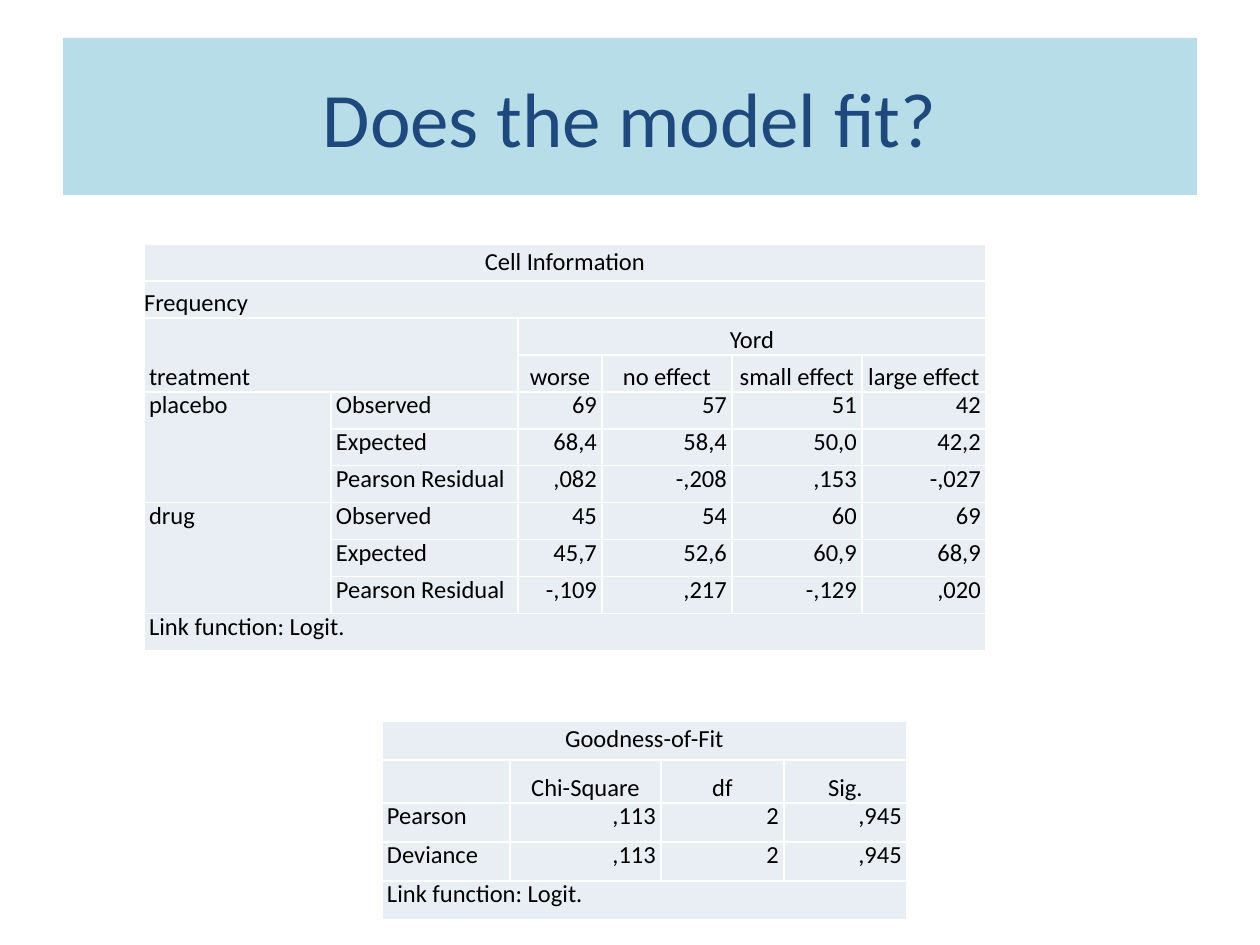
from lxml.etree import SubElement
from pptx import Presentation
from pptx.dml.color import RGBColor
from pptx.enum.text import MSO_ANCHOR, PP_ALIGN
from pptx.oxml.ns import qn
from pptx.util import Pt

PX = 914400 // 126  # EMU in one px
FONT = "Calibri"
BLACK = RGBColor(0x00, 0x00, 0x00)
WHITE = RGBColor(0xFF, 0xFF, 0xFF)
NAVY = RGBColor(0x1F, 0x49, 0x7D)
AQUA = RGBColor(0xB7, 0xDE, 0xE8)
PALE = RGBColor(0xE9, 0xED, 0xF4)

TITLE = "Does the model fit?"

# None is a cell covered by a merge; spans are (row, col, last row, last col)
CELL_INFO = {
    "at": (144, 244),
    "cols": (187, 187, 84, 130, 130, 124),
    "rows": (37,) * 11,
    "head_rows": 4,
    "label_cols": 2,
    "flush": "Frequency",
    "spans": [(0, 0, 0, 5), (1, 0, 1, 5), (2, 0, 3, 1), (2, 2, 2, 5),
              (4, 0, 6, 0), (7, 0, 9, 0), (10, 0, 10, 5)],
    "cells": [
        ("Cell Information", None, None, None, None, None),
        ("Frequency", None, None, None, None, None),
        ("treatment", None, "Yord", None, None, None),
        (None, None, "worse", "no effect", "small effect", "large effect"),
        ("placebo", "Observed", "69", "57", "51", "42"),
        (None, "Expected", "68,4", "58,4", "50,0", "42,2"),
        (None, "Pearson Residual", ",082", "-,208", ",153", "-,027"),
        ("drug", "Observed", "45", "54", "60", "69"),
        (None, "Expected", "45,7", "52,6", "60,9", "68,9"),
        (None, "Pearson Residual", "-,109", ",217", "-,129", ",020"),
        ("Link function: Logit.", None, None, None, None, None),
    ],
}
FIT = {
    "at": (382, 721),
    "cols": (128, 151, 123, 123),
    "rows": (39, 43, 39, 39, 39),
    "head_rows": 2,
    "label_cols": 1,
    "flush": None,
    "spans": [(0, 0, 0, 3), (4, 0, 4, 3)],
    "cells": [
        ("Goodness-of-Fit", None, None, None),
        (None, "Chi-Square", "df", "Sig."),
        ("Pearson", ",113", "2", ",945"),
        ("Deviance", ",113", "2", ",945"),
        ("Link function: Logit.", None, None, None),
    ],
}


def add_run(p, text, size, color):
    r = p.add_run()
    r.text = text
    r.font.name, r.font.size = FONT, Pt(size)
    r.font.color.rgb = color


def style_cell(cell):
    """White 1 pt borders, pale fill, no margins."""
    tcPr = cell._tc.get_or_add_tcPr()
    for side in ("lnL", "lnR", "lnT", "lnB"):
        ln = SubElement(tcPr, qn(f"a:{side}"), w=str(Pt(1)))
        fill = SubElement(ln, qn("a:solidFill"))
        SubElement(fill, qn("a:srgbClr"), val=str(WHITE))
    cell.fill.solid()
    cell.fill.fore_color.rgb = PALE
    cell.margin_left = cell.margin_right = 0
    cell.margin_top = cell.margin_bottom = 0


def add_stat_table(s, data):
    cols, rows = data["cols"], data["rows"]
    box = (*data["at"], sum(cols), sum(rows))
    table = s.shapes.add_table(len(rows), len(cols), *(v * PX for v in box)).table
    table.first_row = table.horz_banding = False
    for col, width in zip(table.columns, cols):
        col.width = width * PX
    for row, height in zip(table.rows, rows):
        row.height = height * PX

    for i, texts in enumerate(data["cells"]):
        in_head = i < data["head_rows"]
        for j, text in enumerate(texts):
            cell = table.cell(i, j)
            style_cell(cell)
            # Title in the middle, headings at the bottom, body at the top
            if i == 0:
                cell.vertical_anchor = MSO_ANCHOR.MIDDLE
            else:
                cell.vertical_anchor = MSO_ANCHOR.BOTTOM if in_head else MSO_ANCHOR.TOP
            if text is None:
                continue
            p = cell.text_frame.paragraphs[0]
            p.line_spacing = Pt(16)
            # Labels left, headings centred, numbers right
            if i > 0 and j < data["label_cols"]:
                p.alignment = PP_ALIGN.LEFT
            else:
                p.alignment = PP_ALIGN.CENTER if in_head else PP_ALIGN.RIGHT
            if text != data["flush"]:
                pPr = p._p.get_or_add_pPr()
                for side in ("marL", "marR"):
                    pPr.set(side, str(5 * PX))
            add_run(p, text, 14, BLACK)

    for top, left, bottom, right in data["spans"]:
        table.cell(top, left).merge(table.cell(bottom, right))


prs = Presentation()
prs.slide_width, prs.slide_height = 1260 * PX, 945 * PX
s = prs.slides.add_slide(prs.slide_layouts[5])

# Title band
title = s.shapes.title
title.left, title.top, title.width, title.height = (v * PX for v in (63, 38, 1134, 157))
title.fill.solid()
title.fill.fore_color.rgb = AQUA
tf = title.text_frame
tf.vertical_anchor = MSO_ANCHOR.MIDDLE
p = tf.paragraphs[0]
p.alignment = PP_ALIGN.CENTER
add_run(p, TITLE, 44, NAVY)

# Tables
for data in (CELL_INFO, FIT):
    add_stat_table(s, data)

prs.save("out.pptx")
